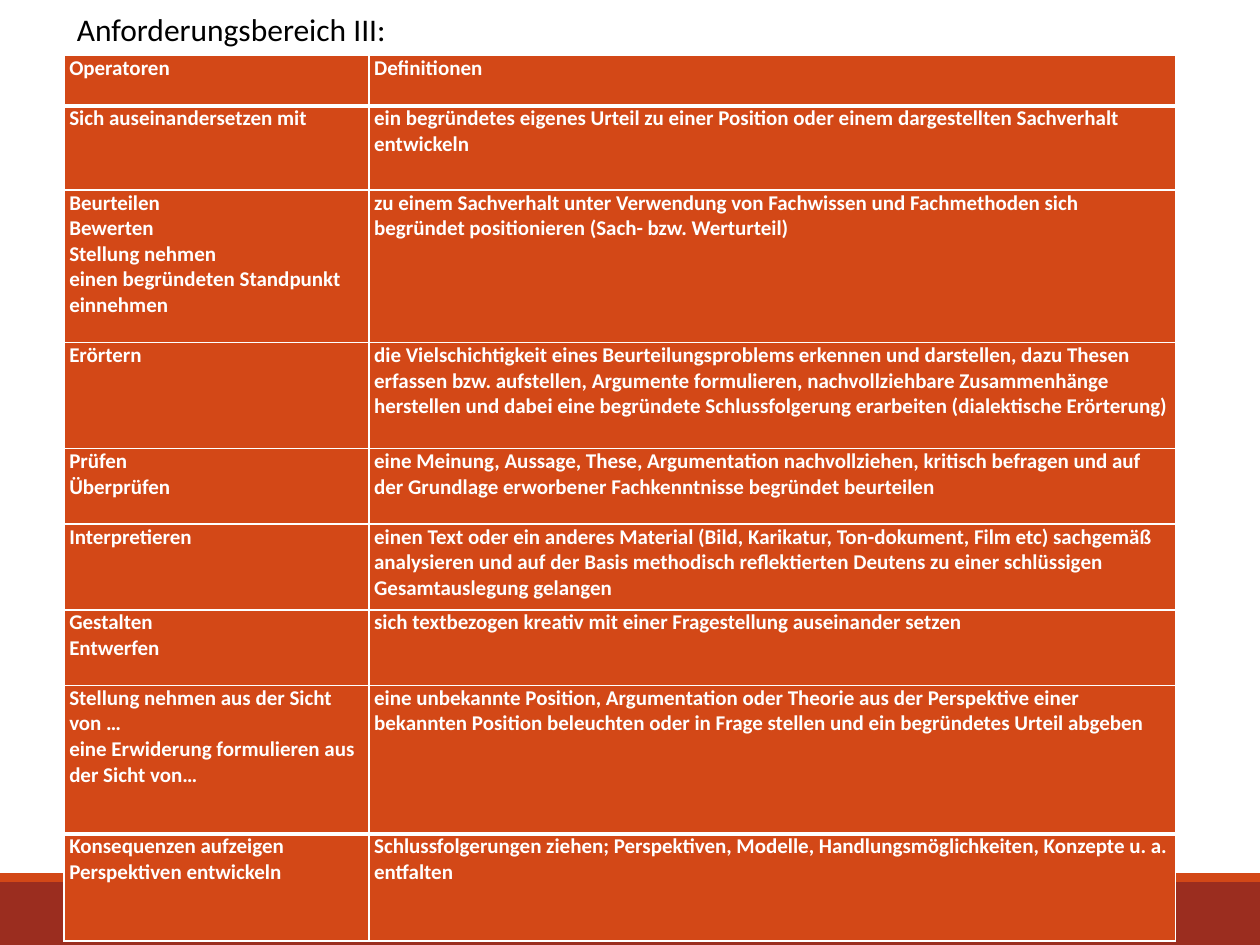
from dataclasses import dataclass

from pptx import Presentation
from pptx.dml.color import RGBColor
from pptx.enum.shapes import MSO_SHAPE
from pptx.enum.text import MSO_ANCHOR, MSO_AUTO_SIZE, PP_ALIGN
from pptx.oxml.ns import qn
from pptx.util import Inches, Pt
from lxml.etree import SubElement


@dataclass(frozen=True)
class Theme:
    font: str = "Calibri"
    title_size: int = 18
    cell_size: int = 12
    thin_line: int = 1
    thick_line: int = 3
    orange: str = "D34817"
    dark_red: str = "9B2D1F"
    white: str = "FFFFFF"
    black: str = "000000"


THEME = Theme()
COLUMN_WIDTHS = (2.42, 6.4)

# Row height, operators (one per paragraph), definition
ROWS = (
    (0.4, ["Operatoren"], "Definitionen"),
    (0.67, ["Sich auseinandersetzen mit"],
     "ein begründetes eigenes Urteil zu einer Position oder einem dargestellten "
     "Sachverhalt entwickeln"),
    (1.21, ["Beurteilen", "Bewerten", "Stellung nehmen",
            "einen begründeten Standpunkt einnehmen"],
     "zu einem Sachverhalt unter Verwendung von Fachwissen und Fachmethoden sich "
     "begründet positionieren (Sach- bzw. Werturteil)"),
    (0.84, ["Erörtern"],
     "die Vielschichtigkeit eines Beurteilungsproblems erkennen und darstellen, "
     "dazu Thesen erfassen bzw. aufstellen, Argumente formulieren, "
     "nachvollziehbare Zusammenhänge herstellen und dabei eine begründete "
     "Schlussfolgerung erarbeiten (dialektische Erörterung)"),
    (0.6, ["Prüfen", "Überprüfen"],
     "eine Meinung, Aussage, These, Argumentation nachvollziehen, kritisch "
     "befragen und auf der Grundlage erworbener Fachkenntnisse begründet "
     "beurteilen"),
    (0.68, ["Interpretieren"],
     "einen Text oder ein anderes Material (Bild, Karikatur, Ton-dokument, Film "
     "etc) sachgemäß analysieren und auf der Basis methodisch reflektierten "
     "Deutens zu einer schlüssigen Gesamtauslegung gelangen"),
    (0.6, ["Gestalten", "Entwerfen"],
     "sich textbezogen kreativ mit einer Fragestellung auseinander setzen"),
    (1.18, ["Stellung nehmen aus der Sicht von …",
            "eine Erwiderung formulieren aus der Sicht von…"],
     "eine unbekannte Position, Argumentation oder Theorie aus der Perspektive "
     "einer bekannten Position beleuchten oder in Frage stellen und ein "
     "begründetes Urteil abgeben"),
    (0.85, ["Konsequenzen aufzeigen", "Perspektiven entwickeln"],
     "Schlussfolgerungen ziehen; Perspektiven, Modelle, Handlungsmöglichkeiten, "
     "Konzepte u. a. entfalten"),
)


def style_font(font, size, color, bold=False):
    font.name = THEME.font
    font.size = Pt(size)
    font.bold = bold
    font.color.rgb = RGBColor.from_string(color)


def add_band(slide, top, height, color):
    band = slide.shapes.add_shape(
        MSO_SHAPE.RECTANGLE, 0, Inches(top), Inches(10), Inches(height))
    band.shadow.inherit = False
    band.fill.solid()
    band.fill.fore_color.rgb = RGBColor.from_string(color)
    band.line.fill.background()


def set_title(slide, text):
    title = slide.shapes.title
    title.left, title.top = Inches(0.51), Inches(0.03)
    title.width, title.height = Inches(2.99), Inches(0.4)
    frame = title.text_frame
    frame.text = text
    frame.word_wrap = False
    frame.auto_size = MSO_AUTO_SIZE.SHAPE_TO_FIT_TEXT
    frame.vertical_anchor = MSO_ANCHOR.TOP
    para = frame.paragraphs[0]
    para.alignment = PP_ALIGN.LEFT
    style_font(para.font, THEME.title_size, THEME.black)


def set_borders(cell, top, bottom):
    properties = cell._tc.get_or_add_tcPr()
    widths = {"a:lnL": THEME.thin_line, "a:lnR": THEME.thin_line,
              "a:lnT": top, "a:lnB": bottom}
    for tag, width in widths.items():
        line = SubElement(properties, qn(tag), w=str(Pt(width)))
        fill = SubElement(line, qn("a:solidFill"))
        SubElement(fill, qn("a:srgbClr"), val=THEME.white)


def fill_cell(cell, lines, top, bottom):
    set_borders(cell, top, bottom)
    cell.fill.solid()
    cell.fill.fore_color.rgb = RGBColor.from_string(THEME.orange)
    cell.margin_left = cell.margin_right = Inches(0.04)
    cell.margin_top = cell.margin_bottom = 0
    cell.text = "\n".join(lines)
    for para in cell.text_frame.paragraphs:
        style_font(para.font, THEME.cell_size, THEME.white, bold=True)


def add_operator_table(slide):
    table = slide.shapes.add_table(
        len(ROWS), len(COLUMN_WIDTHS), Inches(0.51), Inches(0.44),
        Inches(sum(COLUMN_WIDTHS)), Inches(sum(row[0] for row in ROWS))).table
    table.horz_banding = False
    for column, width in zip(table.columns, COLUMN_WIDTHS):
        column.width = Inches(width)

    # Thick rules lie below the header and above the last row
    last = len(ROWS) - 1
    rules = [THEME.thin_line] * (len(ROWS) + 1)
    rules[1] = rules[last] = THEME.thick_line
    for index, (height, operators, definition) in enumerate(ROWS):
        table.rows[index].height = Inches(height)
        for column, lines in enumerate((operators, [definition])):
            fill_cell(table.cell(index, column), lines,
                      rules[index], rules[index + 1])


def main():
    deck = Presentation()
    deck.slide_width, deck.slide_height = Inches(10), Inches(7.5)
    slide = deck.slides.add_slide(deck.slide_layouts[5])

    # Footer bands
    add_band(slide, 7, 0.5, THEME.dark_red)
    add_band(slide, 6.93, 0.07, THEME.orange)

    # Heading and table
    set_title(slide, "Anforderungsbereich III:")
    add_operator_table(slide)
    deck.save("out.pptx")


if __name__ == "__main__":
    main()
